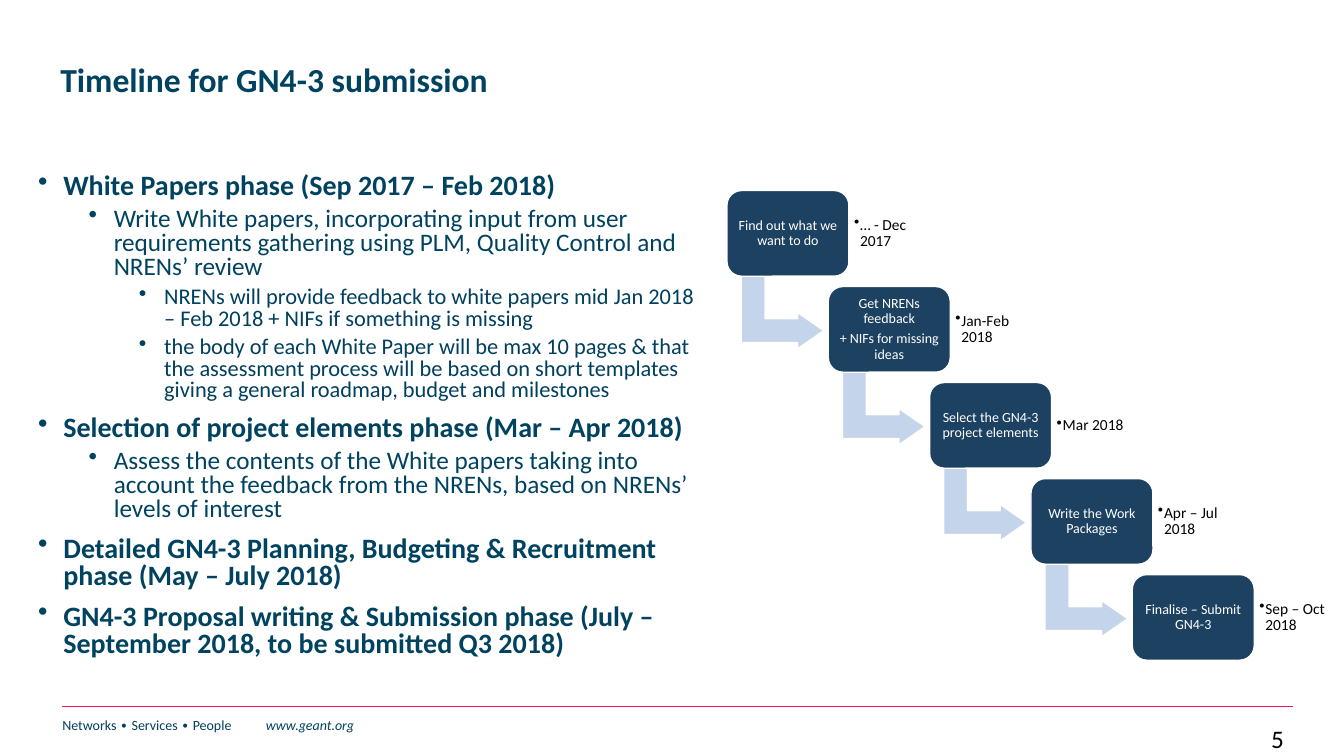
from lxml.etree import SubElement
from pptx import Presentation
from pptx.dml.color import RGBColor
from pptx.enum.shapes import MSO_CONNECTOR as Connector, MSO_SHAPE as Shape
from pptx.enum.text import MSO_ANCHOR as Anchor, PP_ALIGN as Align
from pptx.oxml.ns import qn
from pptx.util import Inches, Pt

NAVY, INK, TEAL = "004361", "003F5E", "004360"
CARD, ARROW, RULE = "1C4161", "C4D5EB", "ED1556"
WHITE, BLACK = "FFFFFF", "000000"

LEVELS = [
    dict(size=20, color=TEAL, bold=True, before=10, margin=0.25),
    dict(size=18, color=NAVY, before=5, margin=0.75),
    dict(size=16, color=INK, before=5, margin=1.25),
]
PHASES = [
    (0, "White Papers phase (Sep 2017 – Feb 2018)"),
    (1, "Write White papers, incorporating input from user requirements gathering "
        "using PLM, Quality Control and NRENs’ review"),
    (2, "NRENs will provide feedback to white papers mid Jan 2018 – Feb 2018 "
        "+ NIFs if something is missing"),
    (2, "the body of each White Paper will be max 10 pages & that the assessment "
        "process will be based on short templates giving a general roadmap, "
        "budget and milestones"),
    (0, "Selection of project elements phase (Mar – Apr 2018)"),
    (1, "Assess the contents of the White papers taking into account the feedback "
        "from the NRENs, based on NRENs’ levels of interest"),
    (0, "Detailed GN4-3 Planning, Budgeting & Recruitment phase (May – July 2018)"),
    (0, "GN4-3 Proposal writing & Submission phase (July – September 2018, "
        "to be submitted Q3 2018)"),
]
STEPS = [
    (["Find out what we want to do"], "… - Dec 2017"),
    (["Get NRENs feedback", "+ NIFs for missing ideas"], "Jan-Feb 2018"),
    (["Select the GN4-3 project elements"], "Mar 2018"),
    (["Write the Work Packages"], "Apr – Jul 2018"),
    (["Finalise – Submit GN4-3"], "Sep – Oct 2018"),
]


def rgb(value):
    """Turn a hex string into a colour."""
    return RGBColor.from_string(value)


def write(frame, text, size=18, color=BLACK, bold=False, italic=False, align=Align.LEFT,
          spacing=1.0, before=0, after=0, margin=0, hanging=0, tab=None):
    """Add a paragraph to the frame, filling its empty first one, and return it."""
    first = not frame.paragraphs[0].runs
    para = frame.paragraphs[0] if first else frame.add_paragraph()
    properties = para._p.get_or_add_pPr()
    if hanging:
        properties.set("marL", str(Inches(margin)))
        properties.set("indent", str(-Inches(hanging)))
        SubElement(properties, qn("a:buChar"), char="•")
    if tab:
        stops = SubElement(properties, qn("a:tabLst"))
        SubElement(stops, qn("a:tab"), pos=str(Inches(tab)), algn="l")
    para.alignment = align
    para.line_spacing = spacing
    para.space_before = Pt(0 if first else before)
    para.space_after = Pt(after)
    add_span(para, text, size, color, bold, italic)
    return para


def add_span(para, text, size, color, bold=False, italic=False):
    """Add a formatted run to a paragraph."""
    span = para.add_run()
    span.text = text
    font = span.font
    font.name, font.size, font.bold, font.italic = "Calibri", Pt(size), bold, italic
    font.color.rgb = rgb(color)


def set_frame(frame, inset=None, anchor=Anchor.TOP):
    """Wrap a text frame and set its anchor and, if given, equal insets."""
    frame.word_wrap = True
    frame.vertical_anchor = anchor
    if inset is not None:
        frame.margin_left = frame.margin_right = Inches(inset)
        frame.margin_top = frame.margin_bottom = Inches(inset)
    return frame


def add_box(page, left, top, width, height, **options):
    """Add a text box and return its frame."""
    box = page.shapes.add_textbox(Inches(left), Inches(top), Inches(width), Inches(height))
    return set_frame(box.text_frame, **options)


def add_block(page, kind, left, top, width, height, fill, adjustments):
    """Add a filled preset shape with a thin white outline."""
    block = page.shapes.add_shape(kind, Inches(left), Inches(top), Inches(width), Inches(height))
    block.shadow.inherit = False
    for index, value in enumerate(adjustments):
        block.adjustments[index] = value
    block.fill.solid()
    block.fill.fore_color.rgb = rgb(fill)
    block.line.color.rgb = rgb(WHITE)
    block.line.width = Pt(1)
    return block


def add_title(page, left, top, width, height):
    """Place the slide title."""
    frame = add_box(page, left, top, width, height, anchor=Anchor.MIDDLE)
    write(frame, "Timeline for GN4-3 submission", size=24, color=NAVY, bold=True, spacing=0.9)


def add_phases(page, left, top, width, height):
    """Place the bulleted list of phases."""
    frame = add_box(page, left, top, width, height)
    for level, text in PHASES:
        write(frame, text, spacing=0.8, hanging=0.25, **LEVELS[level])


def add_staircase(page, left, top, width, height):
    """Place the steps descending evenly from one corner of the box to the other."""
    card_width, card_height, date_width = 1.21, 0.85, 0.88
    last = len(STEPS) - 1
    across = (width - card_width - date_width) / last
    down = (height - card_height) / last
    for index, (labels, date) in enumerate(STEPS):
        x, y = left + index * across, top + index * down
        if index < last:
            arrow = add_block(page, Shape.BENT_UP_ARROW, x + 0.19, y + 0.8, 0.72, 0.82,
                              ARROW, [0.33, 0.25, 0.36])
            arrow.rotation = 90
        card = add_block(page, Shape.ROUNDED_RECTANGLE, x, y, card_width, card_height,
                         CARD, [0.17])
        frame = set_frame(card.text_frame, inset=0.04, anchor=Anchor.MIDDLE)
        for label in labels:
            write(frame, label, size=10, color=WHITE, align=Align.CENTER, spacing=0.9, after=3.5)
        frame = add_box(page, x + card_width, y + 0.08, date_width, card_height - 0.16,
                        inset=0.05, anchor=Anchor.MIDDLE)
        write(frame, date, size=11, spacing=0.9, margin=0.06, hanging=0.06)


def add_footer(page, left, top, width, height):
    """Place the rule, the footer text and the page number."""
    rule = page.shapes.add_connector(Connector.STRAIGHT, Inches(left), Inches(top),
                                     Inches(left + width), Inches(top))
    rule.line.color.rgb = rgb(RULE)
    rule.line.width = Pt(1)
    SubElement(rule._element.spPr, qn("a:effectLst"))
    frame = add_box(page, left - 0.1, top + 0.05, 4.54, height - 0.05)
    para = write(frame, "Networks ∙ Services ∙ People\t", size=10, color=INK, tab=2.02)
    add_span(para, "www.geant.org", 10, NAVY, italic=True)
    frame = add_box(page, left + width - 0.31, top + 0.12, 0.62, 0.35)
    write(frame, "5")


def main():
    """Build the slide and save it."""
    deck = Presentation()
    deck.slide_width, deck.slide_height = Inches(13.33), Inches(7.5)
    page = deck.slides.add_slide(deck.slide_layouts[6])
    add_footer(page, 0.62, 7.01, 12.2, 0.49)
    add_phases(page, 0.28, 1.68, 6.85, 5.3)
    add_title(page, 0.5, 0.08, 10.51, 1.45)
    add_staircase(page, 7.21, 1.89, 6.11, 4.66)
    deck.save("out.pptx")


if __name__ == "__main__":
    main()
